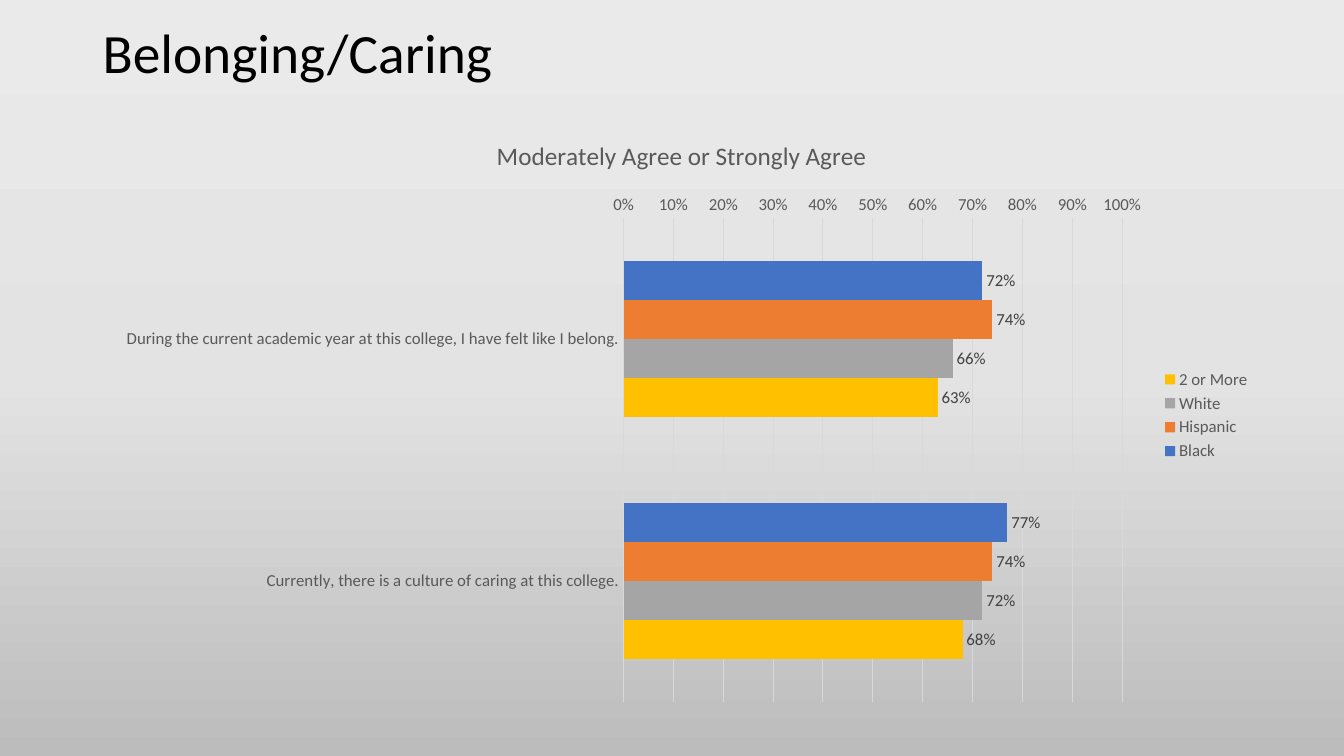
from copy import deepcopy
from dataclasses import dataclass

from lxml.etree import SubElement
from pptx import Presentation
from pptx.chart.chart import Chart
from pptx.chart.data import CategoryChartData
from pptx.chart.series import BarSeries
from pptx.dml.color import RGBColor
from pptx.enum.chart import XL_CHART_TYPE, XL_LABEL_POSITION, XL_LEGEND_POSITION, XL_TICK_MARK
from pptx.enum.text import MSO_ANCHOR
from pptx.oxml.ns import qn
from pptx.slide import Slide
from pptx.text.text import Font
from pptx.util import Inches, Pt

FONT = "Calibri"
COLORS = {
    "title": "000000", "axis": "595959", "label": "404040", "line": "D9D9D9",
    "blue": "4472C4", "orange": "ED7D31", "gray": "A5A5A5", "gold": "FFC000",
    "back_top": "EBEAEA", "back_middle": "E4E3E3", "back_bottom": "BDBCBC",
}
QUESTIONS = [
    "During the current academic year at this college, I have felt like I belong.",
    "Currently, there is a culture of caring at this college.",
]
# Inner plot area as fractions of the chart frame
PLOT_LAYOUT = {"x": 0.45, "y": 0.17, "w": 0.43, "h": 0.81}


@dataclass
class Group:
    name: str
    shares: tuple[float, float]
    color: str


GROUPS = [
    Group("Black", (0.72, 0.77), "blue"),
    Group("Hispanic", (0.74, 0.74), "orange"),
    Group("White", (0.66, 0.72), "gray"),
    Group("2 or More", (0.63, 0.68), "gold"),
]


def rgb(name: str) -> RGBColor:
    return RGBColor.from_string(COLORS[name])


def style_font(font: Font, size: float, color: str) -> None:
    font.name = FONT
    font.size = Pt(size)
    font.bold = False
    font.color.rgb = rgb(color)


def paint_background(page: Slide) -> None:
    fill = page.background.fill
    fill.gradient()
    fill.gradient_angle = 270
    # The default gradient has two stops; add one in the middle
    stop_list = next(page.background._cSld.iter(qn("a:gsLst")))
    stop_list.insert(1, deepcopy(stop_list[0]))
    for index, name in enumerate(["back_top", "back_middle", "back_bottom"]):
        stop = fill.gradient_stops[index]
        stop.position = index / 2
        stop.color.rgb = rgb(name)


def add_title(page: Slide) -> None:
    box = page.shapes.add_textbox(Inches(0.92), Inches(0.22), Inches(11.5), Inches(0.67))
    frame = box.text_frame
    frame.word_wrap = True
    frame.vertical_anchor = MSO_ANCHOR.MIDDLE
    para = frame.paragraphs[0]
    para.text = "Belonging/Caring"
    para.line_spacing = 0.9
    style_font(para.font, 39.6, "title")


def place_plot(chart: Chart) -> None:
    plot_area = next(chart._chartSpace.iter(qn("c:plotArea")))
    for old_layout in plot_area.findall(qn("c:layout")):
        plot_area.remove(old_layout)
    layout = SubElement(plot_area, qn("c:layout"))
    plot_area.insert(0, layout)
    manual = SubElement(layout, qn("c:manualLayout"))
    settings = {"layoutTarget": "inner", "xMode": "edge", "yMode": "edge", **PLOT_LAYOUT}
    for tag, value in settings.items():
        SubElement(manual, qn(f"c:{tag}")).set("val", str(value))


def style_axes(chart: Chart) -> None:
    questions, shares = chart.category_axis, chart.value_axis
    for axis in (questions, shares):
        axis.major_tick_mark = XL_TICK_MARK.NONE
        axis.minor_tick_mark = XL_TICK_MARK.NONE
        style_font(axis.tick_labels.font, 12, "axis")
    questions.reverse_order = True
    shares.minimum_scale, shares.maximum_scale, shares.major_unit = 0, 1, 0.1
    shares.tick_labels.number_format = "0%"
    shares.tick_labels.number_format_is_linked = False
    shares.has_major_gridlines = True
    shares.format.line.fill.background()
    for line in (questions.format.line, shares.major_gridlines.format.line):
        line.color.rgb = rgb("line")
        line.width = Pt(0.75)


def style_bars(series: BarSeries, group: Group) -> None:
    series.format.fill.solid()
    series.format.fill.fore_color.rgb = rgb(group.color)
    series.invert_if_negative = False
    labels = series.data_labels
    labels.show_value = True
    labels.number_format = "0%"
    labels.number_format_is_linked = False
    labels.position = XL_LABEL_POSITION.OUTSIDE_END
    style_font(labels.font, 12, "label")


def add_survey_chart(page: Slide) -> None:
    data = CategoryChartData(number_format="0%")
    data.categories = QUESTIONS
    for group in GROUPS:
        data.add_series(group.name, group.shares)
    chart = page.shapes.add_chart(
        XL_CHART_TYPE.BAR_CLUSTERED,
        Inches(1.01), Inches(1.16), Inches(11.5), Inches(5.92), data,
    ).chart
    style_font(chart.font, 10, "title")

    # Heading and legend
    chart.has_title = True
    heading = chart.chart_title.text_frame.paragraphs[0]
    heading.text = "Moderately Agree or Strongly Agree"
    style_font(heading.font, 18, "axis")
    chart.has_legend = True
    chart.legend.position = XL_LEGEND_POSITION.RIGHT
    chart.legend.include_in_layout = False
    style_font(chart.legend.font, 12, "axis")

    # Plot
    place_plot(chart)
    style_axes(chart)
    plot = chart.plots[0]
    plot.gap_width = 219
    plot.vary_by_categories = False
    for series, group in zip(plot.series, GROUPS):
        style_bars(series, group)


def main() -> None:
    deck = Presentation()
    deck.slide_width, deck.slide_height = Inches(13.33), Inches(7.5)
    page = deck.slides.add_slide(deck.slide_layouts[6])
    paint_background(page)
    add_title(page)
    add_survey_chart(page)
    deck.save("out.pptx")


if __name__ == "__main__":
    main()
